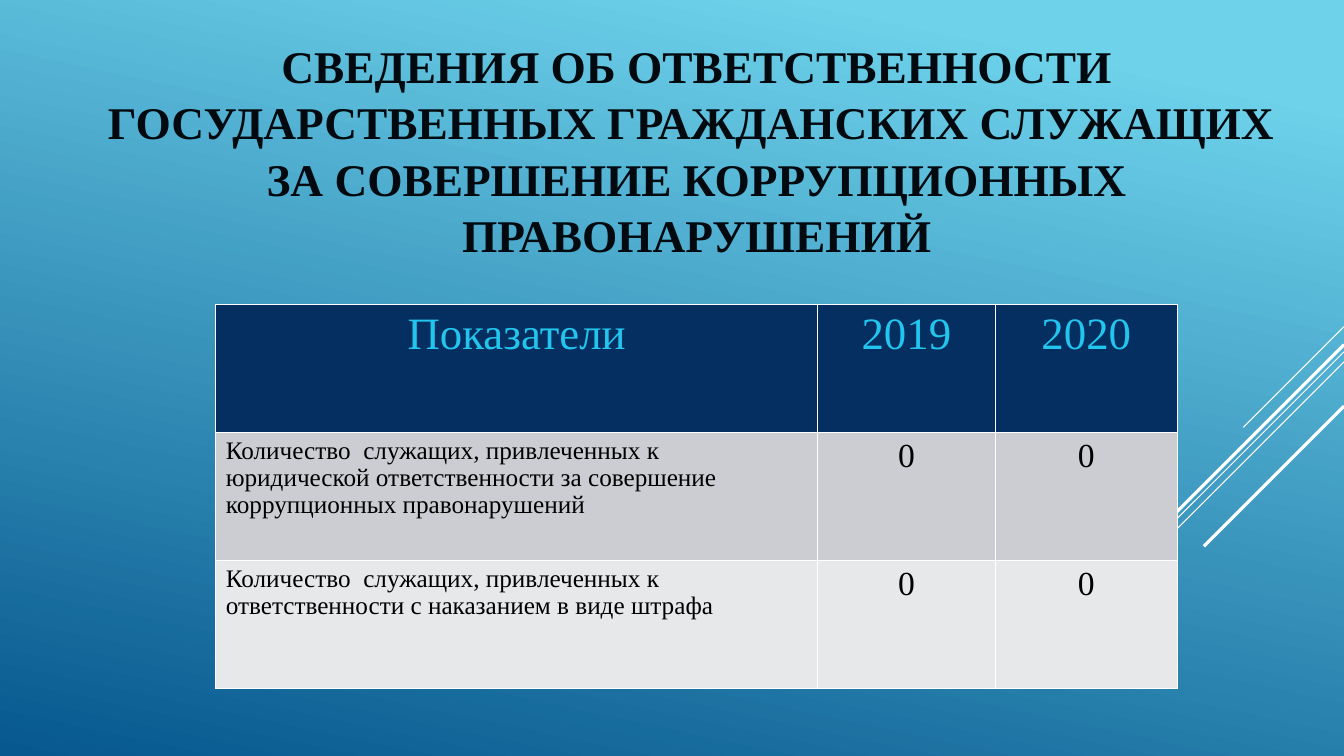
from dataclasses import dataclass

from lxml.etree import SubElement as Sub
from pptx import Presentation
from pptx.dml.color import RGBColor as Rgb
from pptx.enum.shapes import MSO_CONNECTOR as Conn
from pptx.enum.text import MSO_ANCHOR as Anchor, PP_ALIGN as Align
from pptx.oxml.ns import qn
from pptx.util import Inches, Pt

# Grid: the slide is 1333 columns by 750 rows of square units
COLS, ROWS = 1333, 750
UNIT = Inches(7.5) / ROWS
FONT = "Times New Roman"
WHITE, BLACK, NAVY, CYAN = "FFFFFF", "000000", "052F61", "22C5ED"


@dataclass
class Ray:
    """A 45 degree line running down and left from the right edge."""
    top: int
    run: int
    width: float


@dataclass
class Band:
    """A table row and its look."""
    texts: tuple[str, ...]
    fill: str
    color: str
    sizes: tuple[int, ...]
    head: bool = False


RAYS = [
    Ray(324, 100, 0.75),
    Ray(349, 326, 0.75),
    Ray(359, 207, 0.75),
    Ray(342, 191, 2.25),
    Ray(403, 139, 2.25),
]

TITLE = ("СВЕДЕНИЯ ОБ ОТВЕТСТВЕННОСТИ ГОСУДАРСТВЕННЫХ ГРАЖДАНСКИХ СЛУЖАЩИХ \v"
         "ЗА СОВЕРШЕНИЕ КОРРУПЦИОННЫХ ПРАВОНАРУШЕНИЙ")

WIDTHS = (597, 176, 181)
HEIGHT = 127
BANDS = [
    Band(("Показатели", "2019", "2020"), NAVY, CYAN, (32, 32, 32), True),
    Band(("Количество  служащих, привлеченных к юридической ответственности "
          "за совершение коррупционных правонарушений", "0", "0"),
         "CCCDD2", BLACK, (18, 24, 24)),
    Band(("Количество  служащих, привлеченных к ответственности "
          "с наказанием в виде штрафа", "0", "0"),
         "E7E8EA", BLACK, (18, 24, 24)),
]


def grid(n: float) -> int:
    return round(n * UNIT)


def tint(code: str) -> Rgb:
    return Rgb.from_string(code)


def style(para, size: float, color: str, bold: bool = False) -> None:
    for run in para.runs:
        font = run.font
        font.name, font.size, font.bold = FONT, Pt(size), bold
        font.color.rgb = tint(color)


def paint(slide) -> None:
    fill = slide.background.fill
    fill.gradient()
    fill.gradient_angle = 360 - 102
    for stop, (pos, code) in zip(fill.gradient_stops,
                                 ((0.1, "6ED2EB"), (1, "06588E"))):
        stop.position = pos
        stop.color.rgb = tint(code)


def draw_ray(slide, ray: Ray) -> None:
    line = slide.shapes.add_connector(
        Conn.STRAIGHT, grid(COLS), grid(ray.top),
        grid(COLS - ray.run), grid(ray.top + ray.run))
    line.line.color.rgb = tint(WHITE)
    line.line.width = Pt(ray.width)
    Sub(line._element.spPr, qn("a:effectLst"))


def draw_title(slide) -> None:
    box = slide.shapes.add_textbox(grid(65), grid(65), grid(1252), grid(165))
    frame = box.text_frame
    frame.word_wrap = True
    frame.vertical_anchor = Anchor.MIDDLE
    para = frame.paragraphs[0]
    para.text = TITLE
    para.alignment = Align.CENTER
    para.line_spacing = 1.04
    style(para, 32.4, "020A0F", True)


def edge(cell) -> None:
    props = cell._tc.get_or_add_tcPr()
    for spot, side in enumerate(("lnL", "lnR", "lnT", "lnB")):
        line = props.makeelement(qn(f"a:{side}"), {"w": str(Pt(1))})
        Sub(Sub(line, qn("a:solidFill")), qn("a:srgbClr"), val=WHITE)
        props.insert(spot, line)


def draw_table(slide) -> None:
    table = slide.shapes.add_table(
        len(BANDS), len(WIDTHS), grid(214), grid(302),
        grid(sum(WIDTHS)), grid(HEIGHT * len(BANDS))).table
    for col, width in zip(table.columns, WIDTHS):
        col.width = grid(width)
    for row, band in zip(table.rows, BANDS):
        row.height = grid(HEIGHT)
        for n, (cell, text, size) in enumerate(
                zip(row.cells, band.texts, band.sizes)):
            cell.fill.solid()
            cell.fill.fore_color.rgb = tint(band.fill)
            edge(cell)
            para = cell.text_frame.paragraphs[0]
            para.text = text
            if band.head or n:
                para.alignment = Align.CENTER
            else:
                para.alignment = Align.LEFT
                para.line_spacing = 0.97
            style(para, size, band.color)


def main() -> None:
    deck = Presentation()
    deck.slide_width, deck.slide_height = grid(COLS), grid(ROWS)
    slide = deck.slides.add_slide(deck.slide_layouts[6])
    # Backdrop
    paint(slide)
    for ray in RAYS:
        draw_ray(slide, ray)
    # Content
    draw_title(slide)
    draw_table(slide)
    deck.save("out.pptx")


if __name__ == "__main__":
    main()
